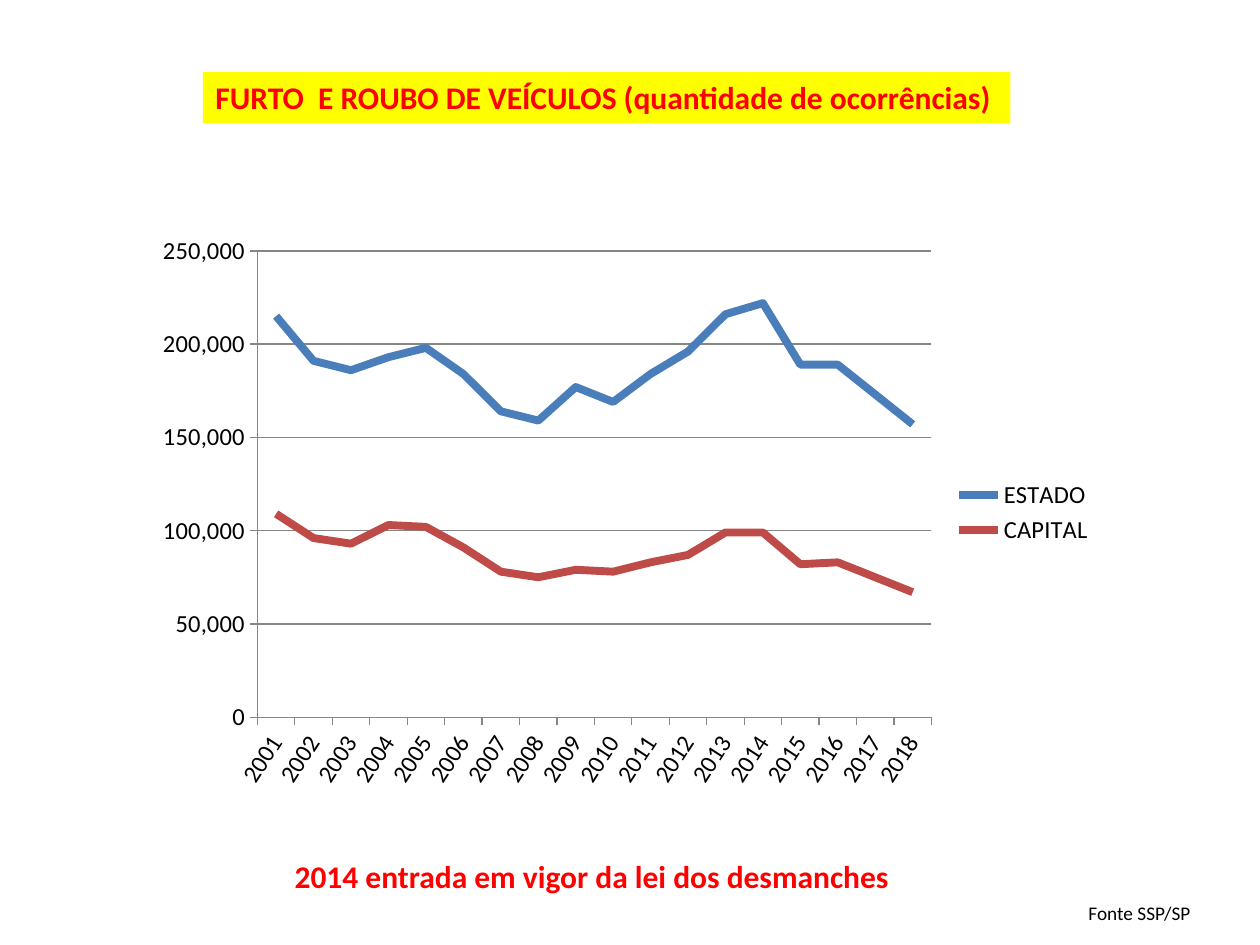
from pptx import Presentation
from pptx.chart.data import CategoryChartData
from pptx.dml.color import RGBColor
from pptx.enum.chart import XL_CHART_TYPE, XL_LEGEND_POSITION, XL_TICK_MARK
from pptx.enum.text import MSO_ANCHOR, MSO_AUTO_SIZE, PP_ALIGN
from pptx.oxml.ns import qn
from pptx.util import Inches, Pt

TITLE = "FURTO  E ROUBO DE VEÍCULOS (quantidade de ocorrências)"
CAPTION = "2014 entrada em vigor da lei dos desmanches"
SOURCE = "Fonte SSP/SP"
YEARS = [str(year) for year in range(2001, 2019)]
THOUSANDS = {
    "ESTADO": [215, 191, 186, 193, 198, 184, 164, 159, 177,
               169, 184, 196, 216, 222, 189, 189, 173, 157],
    "CAPITAL": [109, 96, 93, 103, 102, 91, 78, 75, 79,
                78, 83, 87, 99, 99, 82, 83, 75, 67],
}
BOXES = {
    "title": (1.61, 0.57, 6.41, 0.41),
    "chart": (1.14, 1.78, 7.64, 4.57),
    "caption": (2.24, 6.75, 4.96, 0.4),
    "source": (8.54, 7.1, 1.02, 0.29),
}
THEME = {
    "font": "Calibri",
    "text": RGBColor.from_string("000000"),
    "accent": RGBColor.from_string("FF0000"),
    "highlight": RGBColor.from_string("FFFF00"),
    "axis": RGBColor.from_string("868686"),
    "series": [RGBColor.from_string(c) for c in ("4A7EBB", "BE4B48")],
    "heading_size": Pt(18),
    "chart_size": Pt(14),
    "source_size": Pt(11),
    "series_width": Pt(4.5),
    "axis_width": Pt(0.75),
    "label_angle": -57,
}


def box(name):
    return [Inches(v) for v in BOXES[name]]


def style_font(font, size, color, bold=False):
    font.name = THEME["font"]
    font.size = size
    font.bold = bold
    font.color.rgb = color


def write(sp, text, size, color, bold=False):
    tf = sp.text_frame
    tf.word_wrap = False
    tf.auto_size = MSO_AUTO_SIZE.NONE
    tf.vertical_anchor = MSO_ANCHOR.TOP
    p = tf.paragraphs[0]
    p.alignment = PP_ALIGN.LEFT
    r = p.add_run()
    r.text = text
    style_font(r.font, size, color, bold)


def style_line(line, color, width):
    line.color.rgb = color
    line.width = width


def rotate_labels(axis, degrees):
    style_font(axis.tick_labels.font, THEME["chart_size"], THEME["text"])
    body = axis._element.find(qn("c:txPr")).find(qn("a:bodyPr"))
    body.set("rot", str(degrees * 60000))
    body.set("vert", "horz")


def add_line_chart(slide):
    data = CategoryChartData(number_format="#,##0")
    data.categories = YEARS
    for name, values in THOUSANDS.items():
        data.add_series(name, [v * 1000 for v in values])
    chart = slide.shapes.add_chart(XL_CHART_TYPE.LINE, *box("chart"), data).chart
    style_font(chart.font, THEME["chart_size"], THEME["text"])
    chart.has_title = False
    chart.has_legend = True
    chart.legend.position = XL_LEGEND_POSITION.RIGHT
    chart.legend.include_in_layout = False
    chart.plots[0].vary_by_categories = False

    for series, color in zip(chart.plots[0].series, THEME["series"]):
        series.smooth = False
        style_line(series.format.line, color, THEME["series_width"])

    val_axis = chart.value_axis
    val_axis.minimum_scale, val_axis.maximum_scale = 0, 250000
    val_axis.major_unit = 50000
    val_axis.has_major_gridlines = True
    val_axis.tick_labels.number_format = "#,##0"
    val_axis.tick_labels.number_format_is_linked = False
    rotate_labels(chart.category_axis, THEME["label_angle"])
    for axis in (chart.category_axis, val_axis):
        axis.major_tick_mark = XL_TICK_MARK.OUTSIDE
    for part in (chart.category_axis, val_axis, val_axis.major_gridlines):
        style_line(part.format.line, THEME["axis"], THEME["axis_width"])


def main():
    prs = Presentation()
    prs.slide_width, prs.slide_height = Inches(10), Inches(7.5)
    slide = prs.slides.add_slide(prs.slide_layouts[5])

    title = slide.shapes.title
    title.left, title.top, title.width, title.height = box("title")
    title.fill.solid()
    title.fill.fore_color.rgb = THEME["highlight"]
    write(title, TITLE, THEME["heading_size"], THEME["accent"], bold=True)

    add_line_chart(slide)
    write(slide.shapes.add_textbox(*box("caption")), CAPTION,
          THEME["heading_size"], THEME["accent"], bold=True)
    write(slide.shapes.add_textbox(*box("source")), SOURCE,
          THEME["source_size"], THEME["text"])
    prs.save("out.pptx")


if __name__ == "__main__":
    main()
